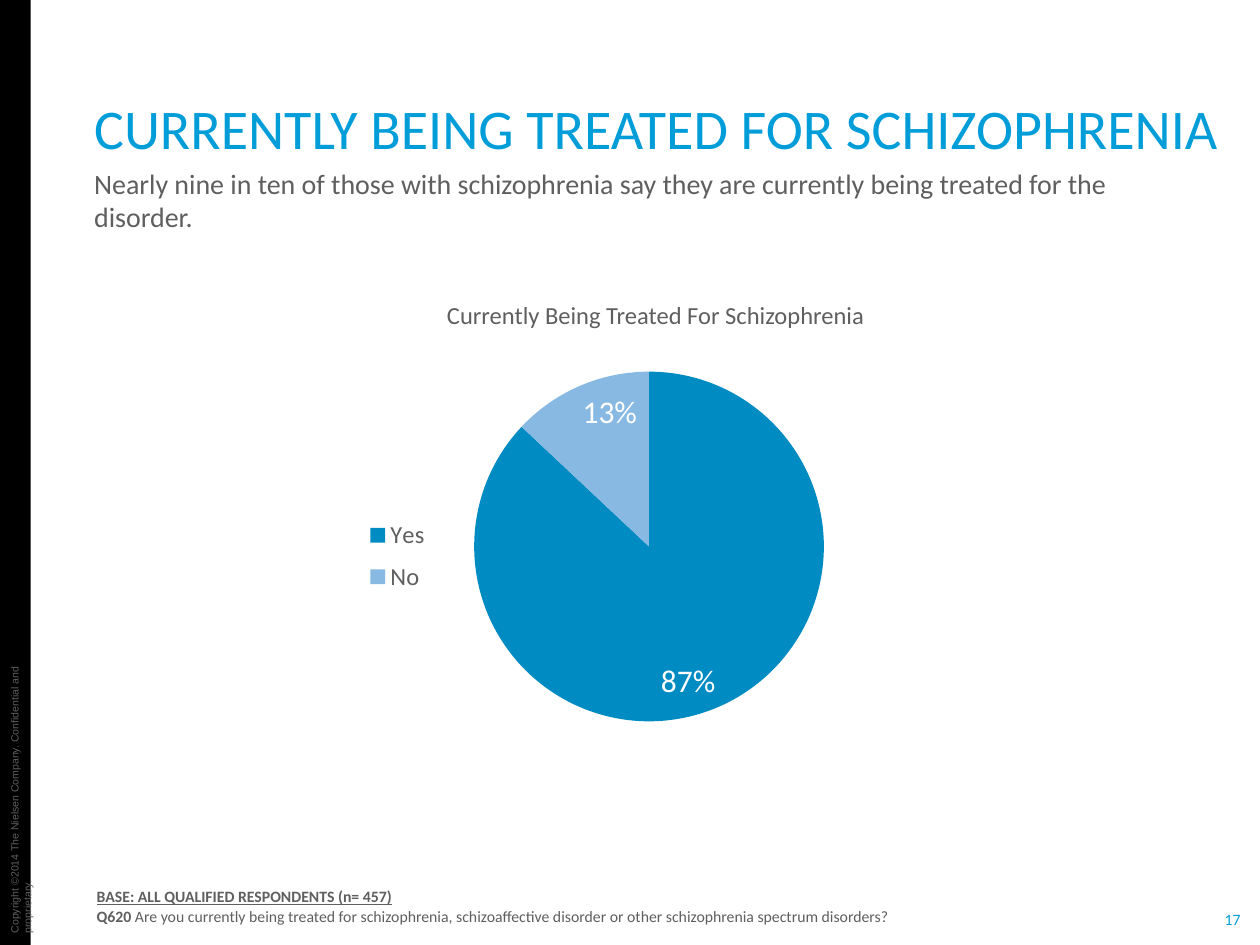
from dataclasses import dataclass

from lxml import etree
from pptx import Presentation
from pptx.chart.data import CategoryChartData
from pptx.dml.color import RGBColor
from pptx.enum.chart import XL_CHART_TYPE, XL_LABEL_POSITION, XL_LEGEND_POSITION
from pptx.enum.shapes import MSO_SHAPE
from pptx.enum.text import MSO_ANCHOR, PP_ALIGN
from pptx.oxml.ns import qn
from pptx.util import Cm, Pt

PIE = XL_CHART_TYPE.PIE
INNER = XL_LABEL_POSITION.INSIDE_END
SIDE = XL_LEGEND_POSITION.LEFT
RECT = MSO_SHAPE.RECTANGLE
TOP, MID, LOW = MSO_ANCHOR.TOP, MSO_ANCHOR.MIDDLE, MSO_ANCHOR.BOTTOM
LEFT, MIDDLE = PP_ALIGN.LEFT, PP_ALIGN.CENTER


@dataclass(frozen=True)
class Theme:
    font: str = "Calibri"
    legal: str = "Arial"
    blue: str = "009DD9"
    gray: str = "5F5F5F"
    black: str = "000000"
    white: str = "FFFFFF"
    slices: tuple = ("008BC2", "87B9E2")
    title: float = 32
    value: float = 18
    lead: float = 16
    label: float = 14
    note: float = 9
    tiny: float = 6


THEME = Theme()


def style(font, size, color, name=THEME.font, bold=False, line=False):
    font.name = name
    font.size = Pt(size)
    font.bold = bold
    font.underline = line
    font.color.rgb = RGBColor.from_string(color)


def paint(fill, color):
    fill.solid()
    fill.fore_color.rgb = RGBColor.from_string(color)


def add_text(slide, text, box, size, color=THEME.gray, name=THEME.font,
             align=LEFT, anchor=TOP, pads=(0.25, 0, 0.25, 0), turn=0,
             wrap=True, before=0):
    shape = slide.shapes.add_textbox(*map(Cm, box))
    shape.rotation = turn
    frame = shape.text_frame
    frame.word_wrap = wrap
    frame.vertical_anchor = anchor
    (frame.margin_left, frame.margin_top,
     frame.margin_right, frame.margin_bottom) = map(Cm, pads)
    rows = [[(text, {})]] if isinstance(text, str) else text
    for i, row in enumerate(rows):
        para = frame.add_paragraph() if i else frame.paragraphs[0]
        para.alignment = align
        if i:
            para.space_before = Pt(before)
        for words, look in row:
            run = para.add_run()
            run.text = words
            style(run.font, size, color, name, **look)


def add_bar(slide, box, color):
    bar = slide.shapes.add_shape(RECT, *map(Cm, box))
    bar.shadow.inherit = False
    paint(bar.fill, color)
    bar.line.fill.background()


def set_layout(node, mark, inner=False, **area):
    for old in node.findall(qn("c:layout")):
        node.remove(old)
    layout = etree.Element(qn("c:layout"))
    manual = etree.SubElement(layout, qn("c:manualLayout"))
    parts = {"layoutTarget": "inner"} if inner else {}
    parts |= {"xMode": "edge", "yMode": "edge"} | area
    for key, value in parts.items():
        etree.SubElement(manual, qn(f"c:{key}")).set("val", str(value))
    if mark is None:
        node.insert(0, layout)
    else:
        node.find(qn(mark)).addnext(layout)


def add_pie(slide, cats, values, box):
    data = CategoryChartData(number_format="0%")
    data.categories = cats
    data.add_series("Series 1", values)
    chart = slide.shapes.add_chart(PIE, *map(Cm, box), data).chart
    style(chart.font, THEME.value, THEME.gray)
    chart.has_title = False
    chart.has_legend = True
    legend = chart.legend
    legend.position = SIDE
    legend.include_in_layout = False
    style(legend.font, THEME.label, THEME.gray)
    plot = chart.plots[0]
    plot.vary_by_categories = True
    for i, color in enumerate(THEME.slices):
        paint(plot.series[0].points[i].format.fill, color)
    plot.has_data_labels = True
    labels = plot.data_labels
    labels.show_value = True
    labels.show_percentage = False
    labels.number_format = "0%"
    labels.number_format_is_linked = False
    labels.position = INNER
    style(labels.font, THEME.value, THEME.white)
    area = chart.element.find(".//" + qn("c:plotArea"))
    set_layout(area, None, True, x=0.21, y=0.12, w=0.59, h=0.74)
    key = chart.element.find(".//" + qn("c:legend"))
    set_layout(key, "c:legendPos", x=0.01, y=0.41, w=0.15, h=0.2)


def main():
    deck = Presentation()
    deck.slide_width, deck.slide_height = Cm(25.4), Cm(19.05)
    slide = deck.slides.add_slide(deck.slide_layouts[6])

    add_bar(slide, (0, 0, 0.62, 19.05), THEME.black)
    add_text(slide, "Copyright ©2014 The Nielsen Company. Confidential and proprietary.",
             (-3, 15.52, 6.58, 0.51), THEME.tiny, name=THEME.legal,
             pads=(0.25, 0.13, 0.25, 0.13), turn=270)
    add_text(slide, "17", (24.66, 18.34, 0.38, 0.38), THEME.note, THEME.blue,
             align=MIDDLE, anchor=MID, pads=(0, 0, 0, 0), wrap=False)
    add_text(slide, "CURRENTLY BEING TREATED FOR SCHIZOPHRENIA",
             (1.65, 1.68, 23.32, 1.57), THEME.title, THEME.blue, anchor=LOW)
    add_text(slide, "Nearly nine in ten of those with schizophrenia say they are "
             "currently being treated for the disorder.",
             (1.65, 3.35, 22.66, 0.86), THEME.lead)
    add_pie(slide, ("Yes", "No"), (0.87, 0.13), (6.99, 6.35, 12.07, 9.53))
    add_text(slide, "Currently Being Treated For Schizophrenia",
             (7.82, 5.92, 10.8, 0.84), THEME.label, align=MIDDLE,
             pads=(0.25, 0.13, 0.25, 0.13))
    base = [("BASE: ALL QUALIFIED RESPONDENTS (n= 457)", {"bold": True, "line": True})]
    ask = [("Q620 ", {"bold": True}),
           ("Are you currently being treated for schizophrenia, schizoaffective "
            "disorder or other schizophrenia spectrum disorders?", {})]
    add_text(slide, [base, ask], (1.7, 18.03, 22.68, 1.02), THEME.note,
             anchor=LOW, pads=(0.25, 0, 0.25, 0.38), before=0.6)
    deck.save("out.pptx")


if __name__ == "__main__":
    main()
